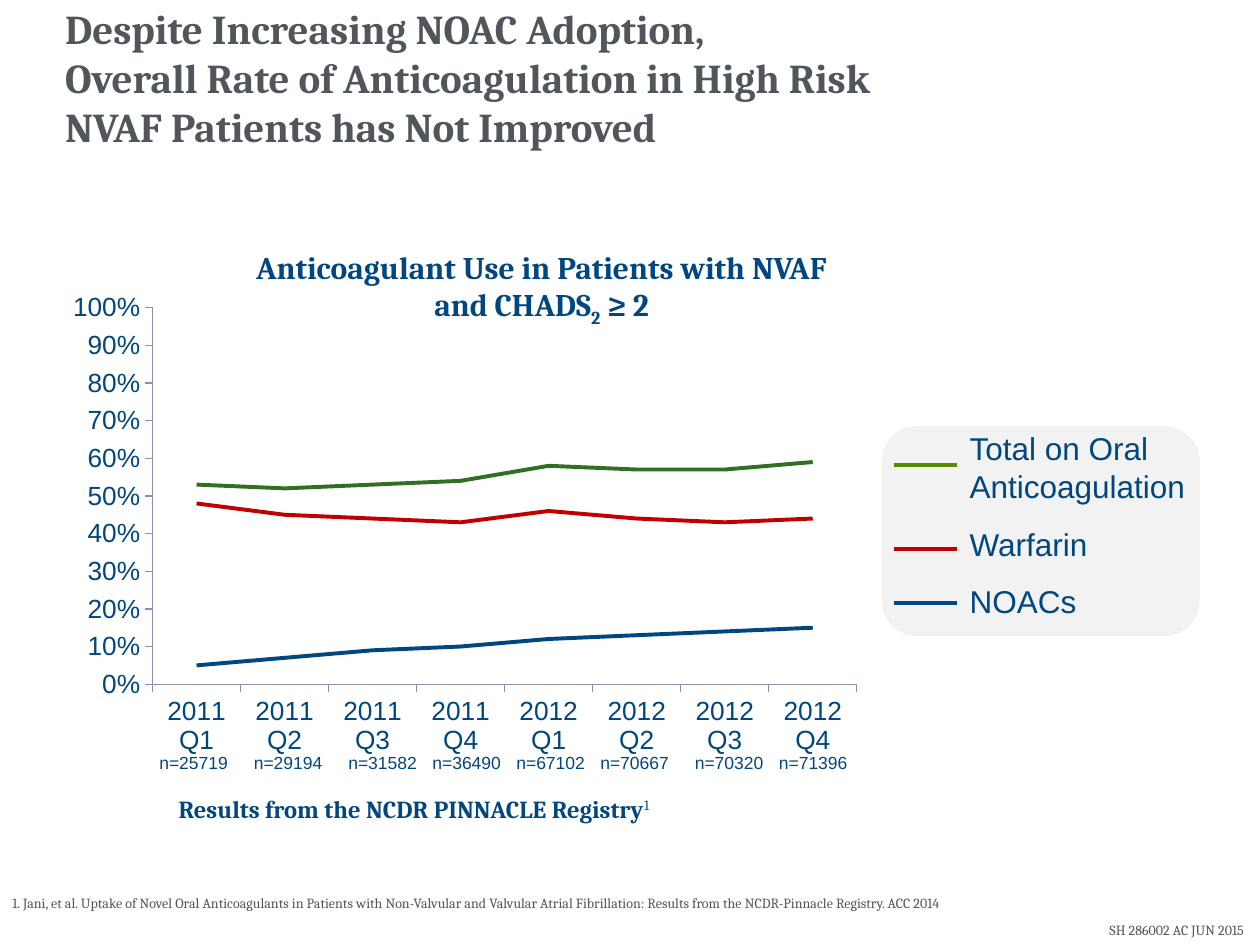
from lxml import etree
from pptx import Presentation
from pptx.chart.data import CategoryChartData
from pptx.dml.color import RGBColor
from pptx.enum.chart import XL_CHART_TYPE as ChartType, XL_TICK_MARK as Tick
from pptx.enum.shapes import MSO_CONNECTOR as Connector, MSO_SHAPE as Shape
from pptx.enum.text import MSO_ANCHOR as Anchor, MSO_AUTO_SIZE as AutoSize, PP_ALIGN as Align
from pptx.oxml import parse_xml
from pptx.oxml.ns import nsdecls, qn
from pptx.util import Pt

COLORS = {
    "grey": "50565C", "navy": "00467F", "red": "C00000", "green": "317023",
    "key_green": "598B00", "panel": "F2F2F2", "axis": "8C90B0",
}
TITLE = {"name": "Cambria", "size": Pt(23.4), "bold": True, "color": "grey"}
HEADING = {"name": "Cambria", "size": Pt(18), "bold": True, "color": "navy"}
SOURCE = {"name": "Cambria", "size": Pt(14), "bold": True, "color": "navy"}
SMALL = {"name": "Cambria", "size": Pt(8), "color": "grey"}
LEGEND = {"name": "Arial", "size": Pt(18), "color": "navy"}
AXIS = {"name": "Arial", "size": Pt(15), "color": "navy"}
COUNT = {"name": "Arial", "size": Pt(10), "color": "navy"}

QUARTERS = [f"{year} Q{quarter}" for year in (2011, 2012) for quarter in range(1, 5)]
SERIES = [
    ("NOACs", "navy", (0.05, 0.07, 0.09, 0.10, 0.12, 0.13, 0.14, 0.15)),
    ("Warfarin", "red", (0.48, 0.45, 0.44, 0.43, 0.46, 0.44, 0.43, 0.44)),
    ("Total on Oral Anticoagulation", "green",
     (0.53, 0.52, 0.53, 0.54, 0.58, 0.57, 0.57, 0.59)),
]
# Left offset within the chart region and sample size of each quarter
COUNTS = [(53, 25719), (107, 29194), (161, 31582), (209, 36490),
          (257, 67102), (305, 70667), (359, 70320), (407, 71396)]
# Legend label, line colour and line offset within the panel
KEYS = [("Total on Oral Anticoagulation", "key_green", 22),
        ("Warfarin", "red", 70), ("NOACs", "navy", 101)]


def rgb(name):
    return RGBColor.from_string(COLORS[name])


def format_font(font, style):
    for attribute, value in style.items():
        if attribute == "color":
            font.color.rgb = rgb(value)
        else:
            setattr(font, attribute, value)


def add_run(paragraph, text, style, baseline=None):
    run = paragraph.add_run()
    run.text = text
    format_font(run.font, style)
    if baseline:
        run.font._element.set("baseline", str(baseline * 1000))


def add_text(slide, box, runs, align=Align.LEFT):
    """Add a one-paragraph text box; each run is (text, style[, baseline])."""
    shape = slide.shapes.add_textbox(*map(Pt, box))
    shape.text_frame.word_wrap = True
    paragraph = shape.text_frame.paragraphs[0]
    paragraph.alignment = align
    for run in runs:
        add_run(paragraph, *run)
    return shape


def format_line(line, color, width):
    line.color.rgb = rgb(color)
    line.width = Pt(width)


def place_title(slide, box):
    title = slide.shapes.title
    title.left, title.top, title.width, title.height = map(Pt, box)
    frame = title.text_frame
    settings = {"auto_size": AutoSize.NONE, "word_wrap": True,
                "vertical_anchor": Anchor.BOTTOM}
    for attribute, value in settings.items():
        setattr(frame, attribute, value)
    frame.text = ("Despite Increasing NOAC Adoption,\v"
                  "Overall Rate of Anticoagulation in High Risk\v"
                  "NVAF Patients has Not Improved")
    paragraph = frame.paragraphs[0]
    paragraph.alignment = Align.LEFT
    for run in paragraph.runs:
        format_font(run.font, TITLE)


def set_plot_layout(chart, x, y, w, h):
    """Fix the inner plot area, as fractions of the chart."""
    plot_area = chart._chartSpace.chart.plotArea
    for layout in plot_area.findall(qn("c:layout")):
        plot_area.remove(layout)
    sizes = "".join(f'<c:{key} val="{value}"/>'
                    for key, value in zip("xywh", (x, y, w, h)))
    plot_area.insert(0, parse_xml(
        f'<c:layout {nsdecls("c")}><c:manualLayout><c:layoutTarget val="inner"/>'
        f'<c:xMode val="edge"/><c:yMode val="edge"/>{sizes}'
        "</c:manualLayout></c:layout>"))


def add_line_chart(slide, box):
    data = CategoryChartData(number_format="0%")
    data.categories = QUARTERS
    for name, _, values in SERIES:
        data.add_series(name, values)
    chart = slide.shapes.add_chart(ChartType.LINE, *map(Pt, box), data).chart
    chart.has_legend = chart.has_title = False
    format_font(chart.font, LEGEND)
    chart.plots[0].vary_by_categories = False
    for series, (_, color, _) in zip(chart.plots[0].series, SERIES):
        series.smooth = False
        format_line(series.format.line, color, 2.25)
    for axis in (chart.category_axis, chart.value_axis):
        axis.has_major_gridlines = False
        axis.major_tick_mark = Tick.OUTSIDE
        format_font(axis.tick_labels.font, AXIS)
        format_line(axis.format.line, "axis", 0.75)
    scale = {"minimum_scale": 0, "maximum_scale": 1, "major_unit": 0.1}
    for attribute, value in scale.items():
        setattr(chart.value_axis, attribute, value)
    labels = chart.value_axis.tick_labels
    labels.number_format, labels.number_format_is_linked = "0%", False
    set_plot_layout(chart, 0.12, 0.05, 0.86, 0.78)


def add_chart_region(slide, box):
    left, top, width, height = box
    add_line_chart(slide, (left, top + 24, width, height))
    # Heading over the plot
    add_text(slide, (left + 96, top, 365, 51),
             [("Anticoagulant Use in Patients with NVAF and CHADS", HEADING),
              ("2", HEADING, -25), (" ≥ 2", HEADING)], Align.CENTER)
    # Sample sizes under the quarters
    for offset, count in COUNTS:
        add_text(slide, (left + offset, top + 288, 60, 19), [(f"n={count}", COUNT)])
    # Source line
    add_text(slide, (left + 64, top + 312, 439, 25),
             [("Results from the NCDR PINNACLE Registry", SOURCE),
              ("1", {**SOURCE, "bold": False}, 30)])


def add_legend(slide, box):
    left, top, width, height = box
    panel = slide.shapes.add_shape(Shape.ROUNDED_RECTANGLE, *map(Pt, box))
    panel.shadow.inherit = False
    panel.fill.solid()
    panel.fill.fore_color.rgb = rgb("panel")
    panel.line.fill.background()
    # Labels
    frame = add_text(slide, (left + 43, top - 2, width - 43, height - 1), []).text_frame
    for index, (label, color, offset) in enumerate(KEYS):
        paragraph = frame.add_paragraph() if index else frame.paragraphs[0]
        if index:
            paragraph.space_before = Pt(11.5)
        add_run(paragraph, label, LEGEND)
        # Line sample
        y = Pt(top + offset)
        line = slide.shapes.add_connector(
            Connector.STRAIGHT, Pt(left + 7), y, Pt(left + 43), y)
        format_line(line.line, color, 2.25)
        etree.SubElement(line._element.spPr, qn("a:effectLst"))


def add_footer(slide, box):
    left, top, width, height = box
    add_text(slide, (left, top, width - 18, 27), [(
        "1. Jani, et al. Uptake of Novel Oral Anticoagulants in Patients with "
        "Non-Valvular and Valvular Atrial Fibrillation: Results from the "
        "NCDR-Pinnacle Registry. ACC 2014", SMALL)])
    add_text(slide, (left + width - 180, top + height - 17, 178, 17),
             [("SH 286002 AC JUN 2015", SMALL)], Align.RIGHT)


def main():
    presentation = Presentation()
    presentation.slide_width, presentation.slide_height = Pt(720), Pt(540)
    slide = presentation.slides.add_slide(presentation.slide_layouts[5])
    place_title(slide, (30, 24, 534, 66))
    add_chart_region(slide, (31, 138, 468, 276))
    add_legend(slide, (504, 243.5, 181.5, 120))
    add_footer(slide, (0, 507.5, 720, 32.5))
    presentation.save("out.pptx")


if __name__ == "__main__":
    main()
